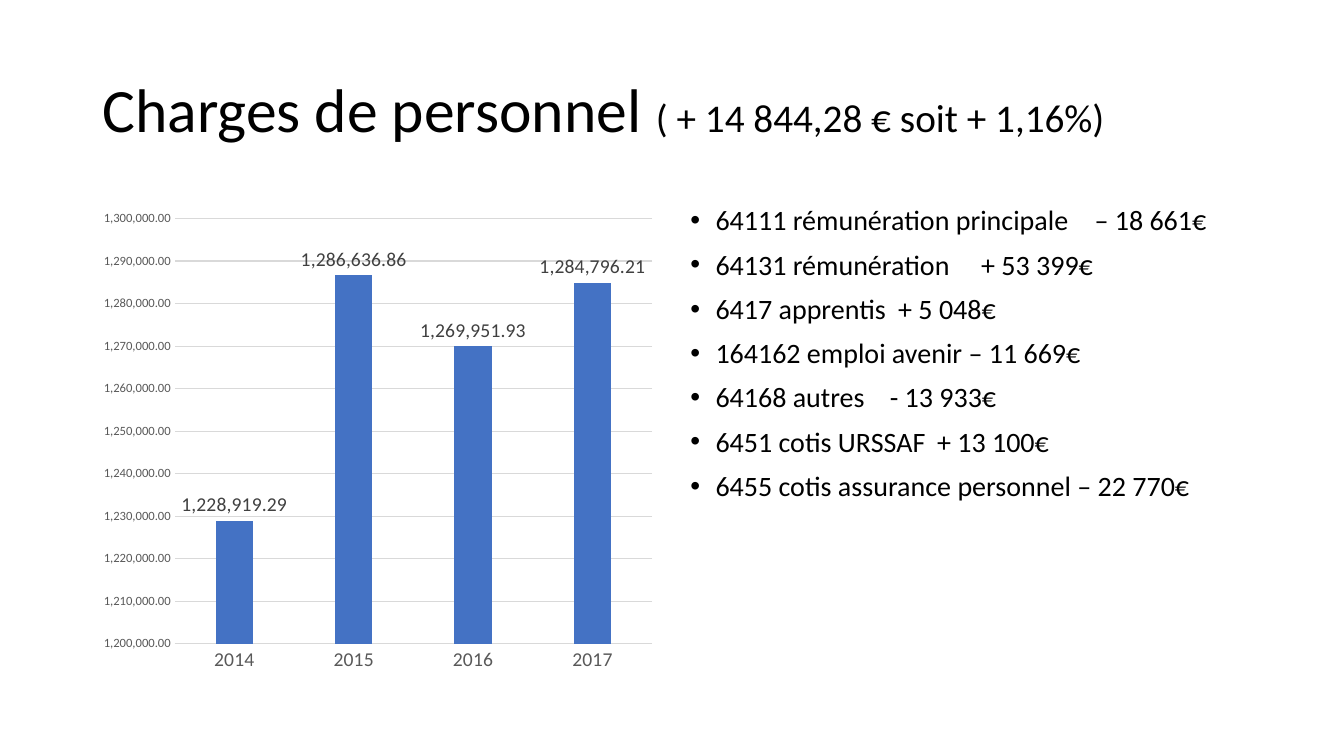
from lxml.etree import SubElement
from pptx import Presentation
from pptx.chart.data import CategoryChartData
from pptx.dml.color import RGBColor
from pptx.enum.chart import XL_CHART_TYPE, XL_LABEL_POSITION, XL_TICK_MARK
from pptx.enum.text import MSO_ANCHOR, MSO_AUTO_SIZE, PP_ALIGN
from pptx.oxml.ns import qn
from pptx.util import Pt

PX = 9525
FONT = "Calibri"
BLACK = RGBColor(0x00, 0x00, 0x00)
GREY = RGBColor(0x59, 0x59, 0x59)
DARK = RGBColor(0x40, 0x40, 0x40)
PALE = RGBColor(0xD9, 0xD9, 0xD9)
BLUE = RGBColor(0x44, 0x72, 0xC4)

COSTS = {
    "2014": 1228919.29,
    "2015": 1286636.86,
    "2016": 1269951.93,
    "2017": 1284796.21,
}
ITEMS = [
    ("64111 rémunération principale\t– 18 661€", 385),
    ("64131 rémunération\t+ 53 399€", 277),
    ("6417 apprentis\t+ 5 048€", 198),
    ("164162 emploi avenir – 11 669€", None),
    ("64168 autres\t- 13 933€", 190),
    ("6451 cotis URSSAF\t+ 13 100€", 235),
    ("6455 cotis assurance personnel – 22 770€", None),
]


def scale(box):
    """Turn a box in px into EMU."""
    return [side * PX for side in box]


def style(font, size, color):
    """Set the face, size and colour of a font."""
    font.name = FONT
    font.size = Pt(size)
    font.color.rgb = color


def write(para, text, size=20, color=BLACK, before=0):
    """Add a run of text to a paragraph."""
    para.alignment = PP_ALIGN.LEFT
    para.line_spacing = 0.9
    para.space_before = Pt(before)
    run = para.add_run()
    run.text = text
    style(run.font, size, color)


def bullet(para, stop):
    """Give a paragraph a hanging bullet and an optional tab stop."""
    props = para._p.get_or_add_pPr()
    props.set("marL", str(24 * PX))
    props.set("indent", str(-24 * PX))
    SubElement(props, qn("a:buFont"), typeface="Arial")
    SubElement(props, qn("a:buChar"), char="•")
    if stop:
        tabs = SubElement(props, qn("a:tabLst"))
        SubElement(tabs, qn("a:tab"), pos=str(stop * PX), algn="l")


def add_title(slide, box):
    """Place the title with its smaller second part."""
    title = slide.shapes.title
    title.left, title.top, title.width, title.height = scale(box)
    frame = title.text_frame
    frame.auto_size = MSO_AUTO_SIZE.NONE
    frame.vertical_anchor = MSO_ANCHOR.MIDDLE
    para = frame.paragraphs[0]
    write(para, "Charges de personnel ", size=44)
    write(para, "( + 14 844,28 € soit + 1,16%)", size=28)


def add_list(slide, box):
    """Place the bulleted list of accounts."""
    frame = slide.shapes.add_textbox(*scale(box)).text_frame
    frame.word_wrap = True
    for index, (text, stop) in enumerate(ITEMS):
        para = frame.add_paragraph() if index else frame.paragraphs[0]
        write(para, text, before=10)
        bullet(para, stop)


def add_costs(slide, box):
    """Place the column chart of yearly costs."""
    data = CategoryChartData(number_format="#,##0.00")
    data.categories = list(COSTS)
    data.add_series("Series 1", list(COSTS.values()))
    kind = XL_CHART_TYPE.COLUMN_CLUSTERED
    chart = slide.shapes.add_chart(kind, *scale(box), data).chart
    chart.has_title = False
    chart.has_legend = False
    style(chart.font, 10, BLACK)

    years, money = chart.category_axis, chart.value_axis
    for axis, size in ((years, 14), (money, 9)):
        axis.major_tick_mark = XL_TICK_MARK.NONE
        axis.minor_tick_mark = XL_TICK_MARK.NONE
        style(axis.tick_labels.font, size, GREY)
    money.minimum_scale = 1200000
    money.maximum_scale = 1300000
    money.major_unit = 10000
    money.tick_labels.number_format = "#,##0.00"
    money.tick_labels.number_format_is_linked = False
    money.format.line.fill.background()
    for part in (years, money.major_gridlines):
        part.format.line.color.rgb = PALE
        part.format.line.width = Pt(0.75)

    plot = chart.plots[0]
    plot.vary_by_categories = False
    plot.gap_width = 219
    plot.overlap = -27
    bars = plot.series[0]
    bars.format.fill.solid()
    bars.format.fill.fore_color.rgb = BLUE
    labels = bars.data_labels
    labels.show_value = True
    labels.position = XL_LABEL_POSITION.OUTSIDE_END
    style(labels.font, 14, DARK)


def main():
    """Build the slide and save it."""
    deck = Presentation()
    deck.slide_width, deck.slide_height = scale((1280, 720))
    slide = deck.slides.add_slide(deck.slide_layouts[5])
    add_title(slide, (88, 38, 1104, 139))
    add_costs(slide, (88, 192, 544, 457))
    add_list(slide, (648, 192, 544, 457))
    deck.save("out.pptx")


if __name__ == "__main__":
    main()
